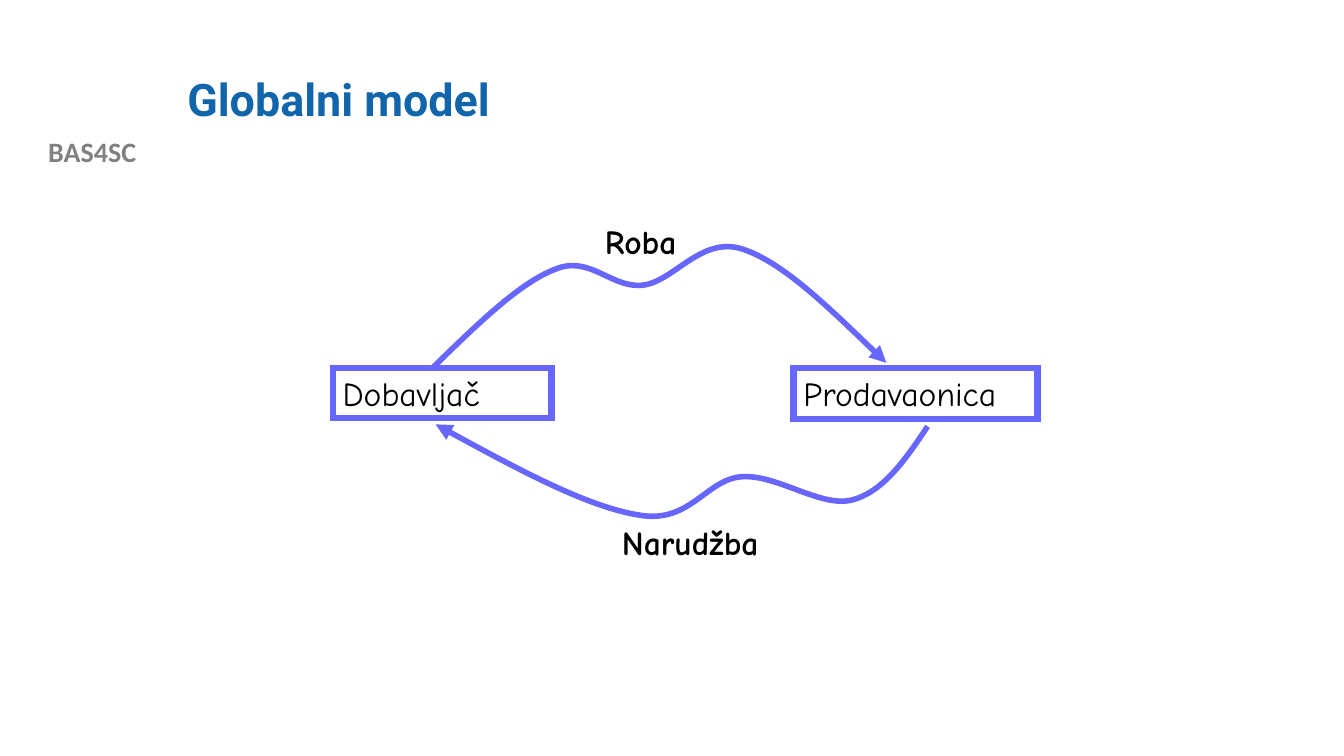
from lxml import etree
from pptx import Presentation
from pptx.dml.color import RGBColor
from pptx.enum.shapes import MSO_SHAPE
from pptx.enum.text import MSO_ANCHOR, PP_ALIGN
from pptx.oxml.ns import qn
from pptx.util import Inches, Pt

RECT = MSO_SHAPE.RECTANGLE
LEFT, CENTER = PP_ALIGN.LEFT, PP_ALIGN.CENTER
TOP, MIDDLE = MSO_ANCHOR.TOP, MSO_ANCHOR.MIDDLE
BLUE = RGBColor(0x10, 0x65, 0xAB)
GRAY = RGBColor(0x80, 0x80, 0x80)
VIOLET = RGBColor(0x67, 0x67, 0xFF)
BLACK = RGBColor(0, 0, 0)
HAND = "Comic Neue"

# Each curve is a start point, then triples of control, control, end.
GOODS = [(4.3, 3.64),
         (4.73, 3.22), (5.16, 2.8), (5.51, 2.67),
         (5.85, 2.53), (6.06, 2.86), (6.37, 2.83),
         (6.68, 2.8), (6.95, 2.34), (7.36, 2.47),
         (7.76, 2.6), (8.27, 3.1), (8.79, 3.6)]
ORDER = [(9.2, 4.23),
         (8.98, 4.56), (8.76, 4.88), (8.45, 4.96),
         (8.14, 5.04), (7.7, 4.7), (7.35, 4.73),
         (7, 4.76), (6.84, 5.2), (6.34, 5.11),
         (5.83, 5.03), (5.07, 4.62), (4.32, 4.21)]


def write(shape, text, size, name, color, bold=False, align=LEFT,
          anchor=TOP, wrap=True, spacing=1.0):
    frame = shape.text_frame
    frame.word_wrap = wrap
    frame.vertical_anchor = anchor
    para = frame.paragraphs[0]
    para.text = text
    para.alignment = align
    para.line_spacing = spacing
    font = para.runs[0].font
    font.size, font.name, font.bold = Pt(size), name, bold
    font.color.rgb = color


def label(slide, box, *args, **style):
    area = slide.shapes.add_textbox(*map(Inches, box))
    write(area, *args, **style)


def outline(shape, width):
    """Leave only a violet line, and return its XML element."""
    shape.shadow.inherit = False
    shape.fill.background()
    shape.line.color.rgb = VIOLET
    shape.line.width = Pt(width)
    return shape.line._get_or_add_ln()


def node(slide, box, text):
    shape = slide.shapes.add_shape(RECT, *map(Inches, box))
    line = outline(shape, 4.5)
    etree.SubElement(line, qn("a:miter"), lim="800000")
    write(shape, text, 24, HAND, BLACK)


def bend(shape):
    """Turn each three line segments into one cubic curve."""
    track = next(shape._element.iter(qn("a:moveTo"))).getparent()
    lines = track.findall(qn("a:lnTo"))
    for i in range(0, len(lines), 3):
        cubic = etree.SubElement(track, qn("a:cubicBezTo"))
        for line in lines[i:i + 3]:
            cubic.append(line[0])
            track.remove(line)


def flow(slide, curve):
    """Draw a curved arrow."""
    start, *rest = [(Inches(x), Inches(y)) for x, y in curve]
    pen = slide.shapes.build_freeform(*start)
    pen.add_line_segments(rest, close=False)
    shape = pen.convert_to_shape()
    bend(shape)
    line = outline(shape, 4)
    etree.SubElement(line, qn("a:round"))
    etree.SubElement(line, qn("a:tailEnd"), type="triangle")


def header(slide):
    label(slide, (0, 1.29, 1.83, 0.43), "BAS4SC", 20, "Calibri", GRAY,
          bold=True, align=CENTER)
    label(slide, (1.76, 0.4, 10.66, 1.22), "Globalni model", 32, "Roboto",
          BLUE, bold=True, anchor=MIDDLE, spacing=0.9)


def model(slide):
    node(slide, (3.3, 3.65, 2.17, 0.5), "Dobavljač")
    node(slide, (7.87, 3.65, 2.42, 0.51), "Prodavaonica")
    flow(slide, GOODS)
    flow(slide, ORDER)
    for box, text in (((5.9, 2.14, 1.15, 0.51), "Roba"),
                      ((6.07, 5.13, 1.77, 0.51), "Narudžba")):
        label(slide, box, text, 24, HAND, BLACK, bold=True, wrap=False)


def main():
    deck = Presentation()
    deck.slide_width, deck.slide_height = Inches(13.33), Inches(7.5)
    slide = deck.slides.add_slide(deck.slide_layouts[6])
    header(slide)
    model(slide)
    deck.save("out.pptx")


if __name__ == "__main__":
    main()
